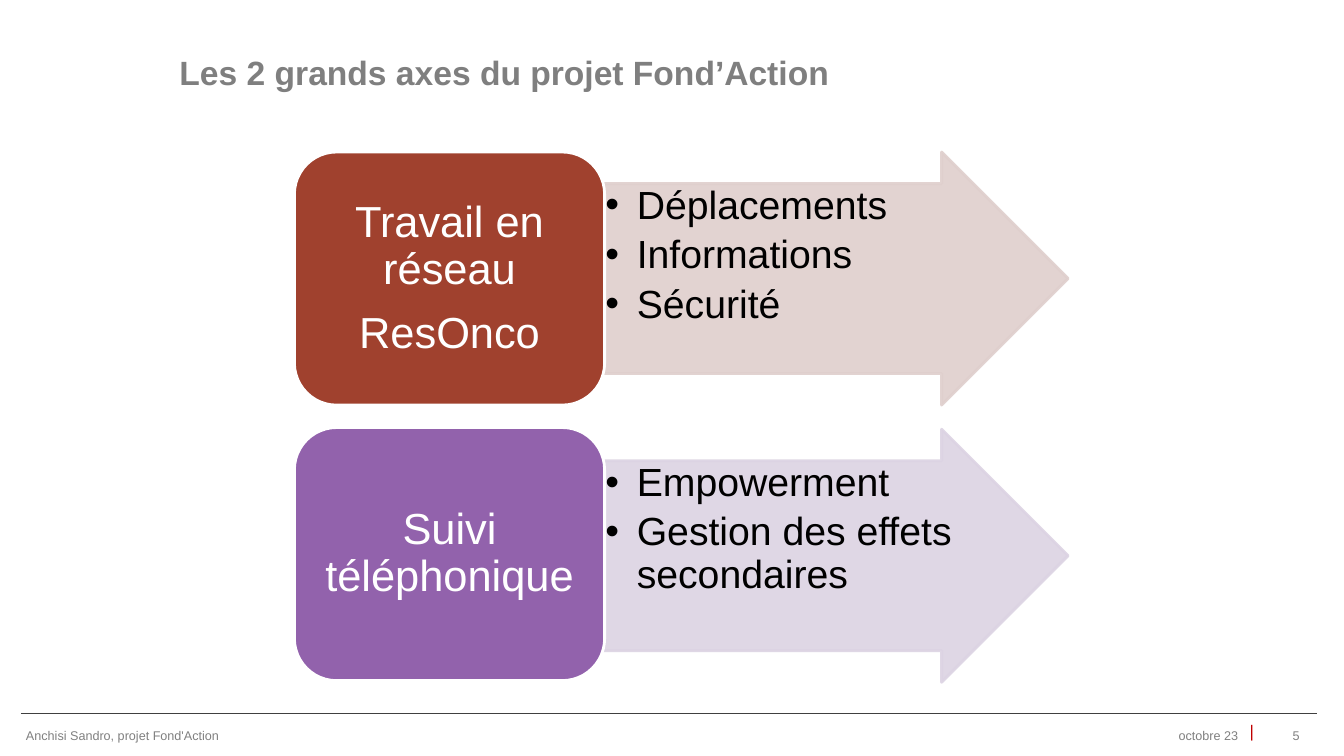
"""Build the slide showing the two main axes of the Fond'Action project."""
from lxml import etree
from pptx import Presentation
from pptx.dml.color import RGBColor
from pptx.enum.shapes import MSO_CONNECTOR, MSO_SHAPE
from pptx.enum.text import MSO_ANCHOR, PP_ALIGN
from pptx.oxml.ns import qn
from pptx.util import Pt

LEFT, CENTER, RIGHT = PP_ALIGN.LEFT, PP_ALIGN.CENTER, PP_ALIGN.RIGHT
TOP, MIDDLE, BOTTOM = MSO_ANCHOR.TOP, MSO_ANCHOR.MIDDLE, MSO_ANCHOR.BOTTOM
ROUNDED, ARROW = MSO_SHAPE.ROUNDED_RECTANGLE, MSO_SHAPE.RIGHT_ARROW

TITLE = "Les 2 grands axes du projet Fond’Action"
AXES = [
    {"name": ["Travail en réseau", "ResOnco"], "color": "A0412E", "tint": "DFCFCD",
     "points": ["Déplacements", "Informations", "Sécurité"]},
    {"name": ["Suivi téléphonique"], "color": "9262AC", "tint": "DCD3E3",
     "points": ["Empowerment", "Gestion des effets secondaires"]},
]
FOOTERS = [
    ("Anchisi Sandro, projet Fond'Action", (11.5, 517, 529, 17), 9, "808080", LEFT, MIDDLE),
    ("octobre 23", (713.5, 517, 178, 17), 9, "808080", RIGHT, MIDDLE),
    ("|", (885.6, 511.2, 26, 21.6), 12, "C00000", LEFT, TOP),
    ("5", (885, 517, 50.4, 17), 9, "808080", RIGHT, MIDDLE),
]

FIRST_TOP, AXIS_HEIGHT = 108.6, 180.8
NAME_LEFT, NAME_WIDTH, NAME_PITCH = 210.3, 221.6, 196.8
ARROW_LEFT, ARROW_WIDTH, ARROW_PITCH = 431, 332, 198
BULLET_INDENT = 22.5
RULE_LEFT, RULE_RIGHT, RULE_TOP = 15, 941, 509.8


def rgb(color):
    return RGBColor.from_string(color)


def write(box, lines, size, color, align, anchor, margins=(7.2, 3.6), bold=False,
          line_spacing=None, space_after=None, bulleted=False):
    frame = box.text_frame
    frame.word_wrap = True
    frame.vertical_anchor = anchor
    frame.margin_left = frame.margin_right = Pt(margins[0])
    frame.margin_top = frame.margin_bottom = Pt(margins[1])
    frame.text = "\n".join(lines)
    for para in frame.paragraphs:
        if bulleted:
            add_bullet(para)
        para.alignment = align
        if line_spacing:
            para.line_spacing = line_spacing
            para.space_after = Pt(space_after)
        for span in para.runs:
            span.font.name = "Arial"
            span.font.size = Pt(size)
            span.font.bold = bold
            span.font.color.rgb = rgb(color)


def add_bullet(para):
    properties = para._p.get_or_add_pPr()
    properties.set("marL", str(Pt(BULLET_INDENT)))
    properties.set("indent", str(-Pt(BULLET_INDENT)))
    etree.SubElement(properties, qn("a:buFont")).set("typeface", "Arial")
    etree.SubElement(properties, qn("a:buChar")).set("char", "•")


def add_block(page, kind, bounds, fill, line):
    block = page.shapes.add_shape(kind, *map(Pt, bounds))
    block.shadow.inherit = False
    block.fill.solid()
    block.fill.fore_color.rgb = rgb(fill)
    block.line.color.rgb = rgb(line)
    block.line.width = Pt(2)
    return block


def add_axis(page, index, axis):
    arrow = add_block(page, ARROW, (ARROW_LEFT, FIRST_TOP + index * ARROW_PITCH,
                                    ARROW_WIDTH, AXIS_HEIGHT), axis["tint"], axis["tint"])
    arrow.adjustments[0], arrow.adjustments[1] = 0.75, 0.5
    for color in arrow._element.spPr.iter(qn("a:srgbClr")):
        etree.SubElement(color, qn("a:alpha")).set("val", "90000")
    write(arrow, axis["points"], 28, "000000", LEFT, TOP, (1.4, 1.4),
          line_spacing=0.9, space_after=5, bulleted=True)

    name = add_block(page, ROUNDED, (NAME_LEFT, FIRST_TOP + index * NAME_PITCH,
                                     NAME_WIDTH, AXIS_HEIGHT), axis["color"], "FFFFFF")
    write(name, axis["name"], 31, "FFFFFF", CENTER, MIDDLE, (9.3, 4.6),
          line_spacing=0.9, space_after=12.2)


def add_footer(page):
    rule = page.shapes.add_connector(MSO_CONNECTOR.STRAIGHT, Pt(RULE_LEFT), Pt(RULE_TOP),
                                     Pt(RULE_RIGHT), Pt(RULE_TOP))
    rule.line.color.rgb = rgb("404040")
    rule.line.width = Pt(0.75)
    etree.SubElement(rule._element.spPr, qn("a:effectLst"))
    for text, bounds, size, color, align, anchor in FOOTERS:
        box = page.shapes.add_textbox(*map(Pt, bounds))
        write(box, [text], size, color, align, anchor)


def main():
    deck = Presentation()
    deck.slide_width, deck.slide_height = Pt(960), Pt(540)
    page = deck.slides.add_slide(deck.slide_layouts[5])
    title = page.shapes.title
    title.left, title.top, title.width, title.height = map(Pt, (121, 11.5, 815.8, 58.3))
    write(title, [TITLE], 24, "7F7F7F", LEFT, BOTTOM, bold=True)
    for index, axis in enumerate(AXES):
        add_axis(page, index, axis)
    add_footer(page)
    deck.save("out.pptx")


if __name__ == "__main__":
    main()
